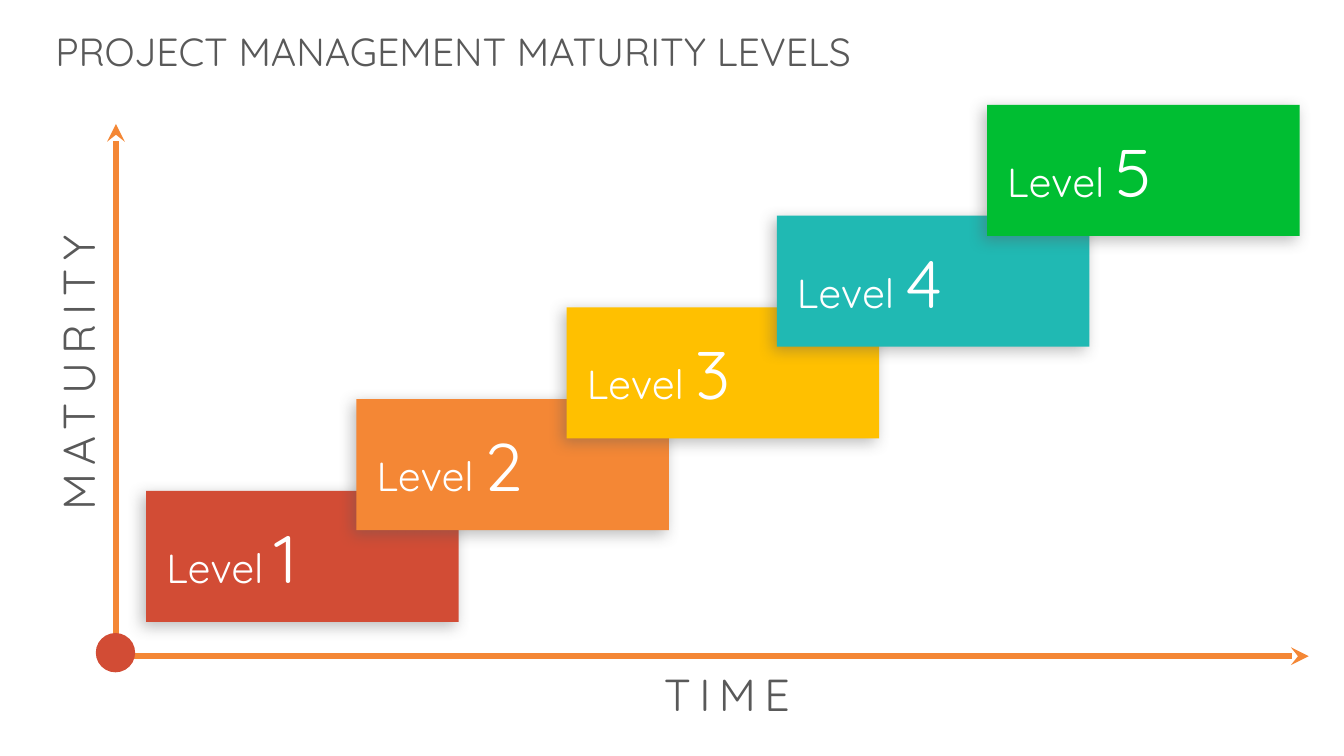
"""Build the project management maturity levels slide."""
from lxml.etree import SubElement
from pptx import Presentation
from pptx.dml.color import RGBColor as RGB
from pptx.enum.shapes import MSO_CONNECTOR as CONN, MSO_SHAPE as SHAPE
from pptx.enum.text import MSO_ANCHOR as ANCHOR, MSO_AUTO_SIZE as AUTO, PP_ALIGN as ALIGN
from pptx.oxml.ns import qn
from pptx.util import Inches, Pt

COLORS = {"text": "595959", "white": "FFFFFF", "axis": "F48735", "origin": "D24C35"}
LEVEL_FILLS = ["D24C35", "F48735", "FFC000", "20B9B3", "00BE32"]
STEP_X, STEP_Y = 2.085, 0.91
TOP_LEVEL_Y = 1.04
ORIGIN_X, ORIGIN_Y = 1.15, 6.51


def style(font, size, color):
    font.name, font.size = "Quicksand", Pt(size)
    font.color.rgb = RGB.from_string(COLORS[color])


def add_solid(kind, x, y, w, h, color):
    sp = s.shapes.add_shape(kind, Inches(x), Inches(y), Inches(w), Inches(h))
    sp.fill.solid()
    sp.fill.fore_color.rgb = RGB.from_string(color)
    sp.line.fill.background()
    sp.shadow.inherit = False
    return sp


prs = Presentation()
prs.slide_width, prs.slide_height = Inches(13.33), Inches(7.5)
s = prs.slides.add_slide(prs.slide_layouts[5])

title = s.shapes.title
title.left, title.top, title.width, title.height = map(Inches, (0.45, 0.22, 11.15, 0.57))
tf = title.text_frame
tf.text = "PROJECT MANAGEMENT MATURITY LEVELS"
tf.vertical_anchor = ANCHOR.TOP
tf.auto_size = AUTO.SHAPE_TO_FIT_TEXT
p = tf.paragraphs[0]
p.alignment = ALIGN.LEFT
style(p.font, 28, "text")

for i, fill in enumerate(LEVEL_FILLS):
    y = TOP_LEVEL_Y if i == len(LEVEL_FILLS) - 1 else 4.87 - i * STEP_Y
    sp = add_solid(SHAPE.RECTANGLE, 1.45 + i * STEP_X, y, 3.1, 1.3, fill)
    effects = sp._element.spPr.find(qn("a:effectLst"))
    shadow = SubElement(effects, qn("a:outerShdw"), blurRad=str(Pt(11)), dist=str(Pt(4)),
                        dir="8100000", algn="tr", rotWithShape="0")
    tint = SubElement(shadow, qn("a:srgbClr"), val=COLORS["text"])
    SubElement(tint, qn("a:alpha"), val="40000")
    tf = sp.text_frame
    tf.word_wrap = True
    tf.vertical_anchor = ANCHOR.MIDDLE
    tf.margin_left = Inches(0.2)
    tf.margin_top = tf.margin_right = tf.margin_bottom = 0
    p = tf.paragraphs[0]
    p.alignment = ALIGN.LEFT
    for text, size in (("Level ", 29), (str(i + 1), 48)):
        r = p.add_run()
        r.text = text
        style(r.font, size, "white")

for end_x, end_y in ((ORIGIN_X, 1.23), (12.98, ORIGIN_Y)):
    axis = s.shapes.add_connector(CONN.STRAIGHT, Inches(ORIGIN_X), Inches(ORIGIN_Y),
                                  Inches(end_x), Inches(end_y))
    axis.line.color.rgb = RGB.from_string(COLORS["axis"])
    axis.line.width = Pt(4.25)
    SubElement(axis.line._get_or_add_ln(), qn("a:tailEnd"), type="stealth")
    SubElement(axis._element.spPr, qn("a:effectLst"))

add_solid(SHAPE.OVAL, 0.95, 6.28, 0.39, 0.39, COLORS["origin"])

for text, x, y, angle in (("MATURITY", -0.77, 3.38, 270), ("TIME", 5.67, 6.57, 0)):
    label = s.shapes.add_textbox(Inches(x), Inches(y), Inches(3.08), Inches(0.64))
    label.rotation = angle
    tf = label.text_frame
    tf.word_wrap = True
    tf.auto_size = AUTO.SHAPE_TO_FIT_TEXT
    p = tf.paragraphs[0]
    p.alignment = ALIGN.CENTER
    r = p.add_run()
    r.text = text
    style(r.font, 32, "text")
    r.font._element.set("spc", "600")

prs.save("out.pptx")
